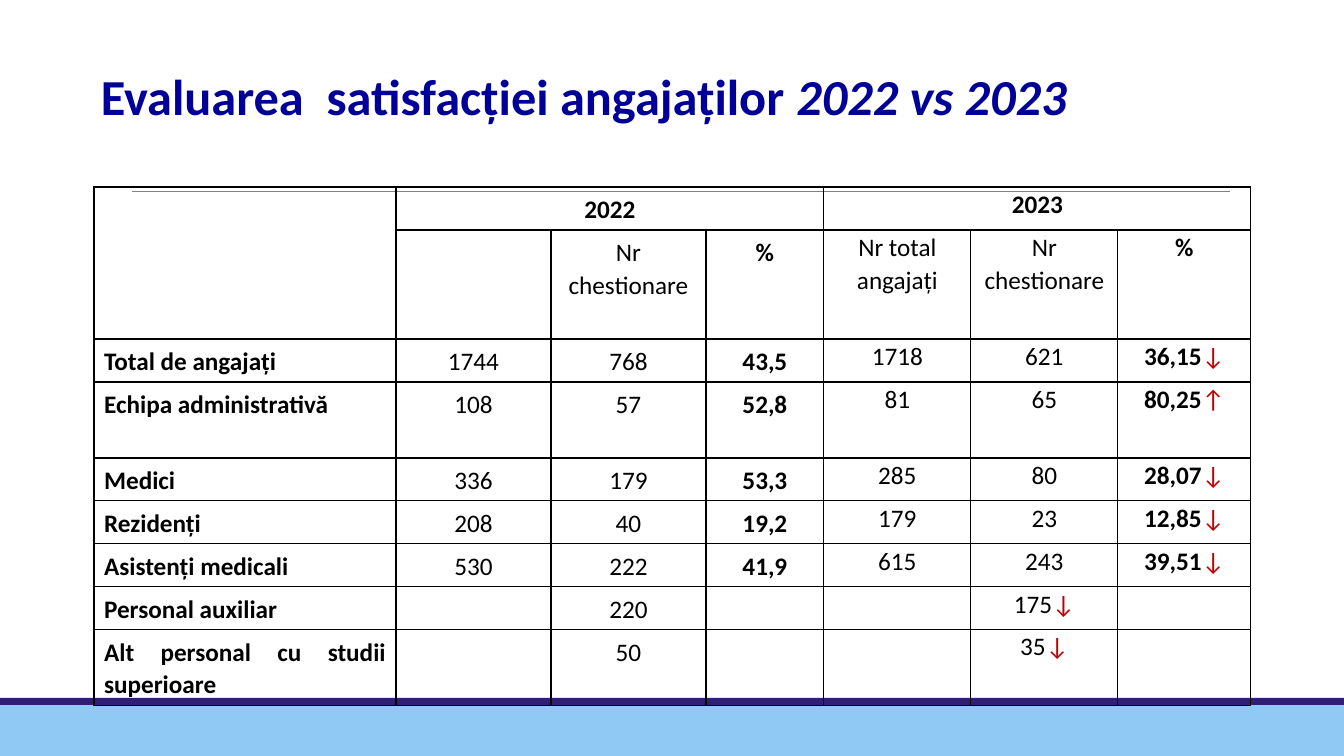
from lxml import etree
from pptx import Presentation
from pptx import util as u
from pptx.dml.color import RGBColor
from pptx.enum import shapes, text
from pptx.oxml import ns

PX_PER_INCH = 100.8
FONT = "Calibri"
COLORS = {
    "title": "000099", "text": "000000", "arrow": "C00000", "border": "000000",
    "band": "8FC9F4", "stripe": "301D7D", "rule": "808080",
}
COLUMN_WIDTHS = [302, 155, 155, 118, 147, 147, 133]
ROW_HEIGHTS = [43, 109, 43, 76, 43, 43, 43, 43, 76]
FIRST_2023_COLUMN = 4
PERCENT_COLUMNS = (3, 6)
MERGES = [((0, 0), (1, 0)), ((0, 1), (0, 3)), ((0, 4), (0, 6))]
ROWS = [
    ["", "2022", "", "", "2023", "", ""],
    ["", "", "Nr chestionare", "%", "Nr total angajați", "Nr chestionare", "%"],
    ["Total de angajați", "1744", "768", "43,5", "1718", "621", "36,15↓"],
    ["Echipa administrativă", "108", "57", "52,8", "81", "65", "80,25↑"],
    ["Medici", "336", "179", "53,3", "285", "80", "28,07↓"],
    ["Rezidenți", "208", "40", "19,2", "179", "23", "12,85↓"],
    ["Asistenți medicali", "530", "222", "41,9", "615", "243", "39,51↓"],
    ["Personal auxiliar", "", "220", "", "", "175↓", ""],
    ["Alt personal cu studii superioare", "", "50", "", "", "35↓", ""],
]


def px(length):
    return u.Emu(round(length * u.Inches(1) / PX_PER_INCH))


def rgb(name):
    return RGBColor.from_string(COLORS[name])


def set_attributes(target, values):
    for name, value in values.items():
        setattr(target, name, value)


def add_run(paragraph, content, color, **font_values):
    run = paragraph.add_run()
    run.text = content
    set_attributes(run.font, {"name": FONT, **font_values})
    run.font.color.rgb = rgb(color)


def add_bar(slide, top, height, color):
    bar = slide.shapes.add_shape(
        shapes.MSO_SHAPE.RECTANGLE, 0, px(top), px(1344), px(height))
    bar.shadow.inherit = False
    bar.fill.solid()
    bar.fill.fore_color.rgb = rgb(color)
    bar.line.fill.background()


def add_rule(slide, left, right, y):
    rule = slide.shapes.add_connector(
        shapes.MSO_CONNECTOR.STRAIGHT, px(left), px(y), px(right), px(y))
    rule.line.color.rgb = rgb("rule")
    rule.line.width = u.Pt(0.5)
    etree.SubElement(rule._element.spPr, ns.qn("a:effectLst"))


def add_title(slide):
    box = slide.shapes.add_textbox(px(91), px(60), px(996), px(72))
    set_attributes(box.text_frame, {
        "word_wrap": False, "auto_size": text.MSO_AUTO_SIZE.SHAPE_TO_FIT_TEXT})
    paragraph = box.text_frame.paragraphs[0]
    style = {"size": u.Pt(36), "bold": True}
    add_run(paragraph, "Evaluarea  satisfacției angajaților ", "title", **style)
    add_run(paragraph, "2022 vs 2023", "title", italic=True, **style)


def add_borders(cell):
    properties = cell._tc.get_or_add_tcPr()
    for index, side in enumerate(("lnL", "lnR", "lnT", "lnB")):
        line = etree.Element(ns.qn(f"a:{side}"), w=str(u.Pt(1)))
        fill = etree.SubElement(line, ns.qn("a:solidFill"))
        etree.SubElement(fill, ns.qn("a:srgbClr"), val=COLORS["border"])
        properties.insert(index, line)


def write_cell(cell, content, bold, alignment):
    """Write the value, with a trailing trend arrow in its own colour."""
    paragraph = cell.text_frame.paragraphs[0]
    set_attributes(paragraph, {"alignment": alignment, "line_spacing": 1.07})
    value = content.rstrip("↑↓")
    arrow = content[len(value):]
    add_run(paragraph, value, "text", size=u.Pt(18), bold=bold)
    if arrow:
        add_run(paragraph, arrow, "arrow", size=u.Pt(18), bold=False)


def add_survey_table(slide):
    frame = slide.shapes.add_table(
        len(ROWS), len(COLUMN_WIDTHS), px(94), px(187),
        px(sum(COLUMN_WIDTHS)), px(sum(ROW_HEIGHTS)))
    table = frame.table
    set_attributes(table, {"first_row": False, "horz_banding": False})
    for column, width in zip(table.columns, COLUMN_WIDTHS):
        column.width = px(width)
    for row, height in zip(table.rows, ROW_HEIGHTS):
        row.height = px(height)
    for start, end in MERGES:
        table.cell(*start).merge(table.cell(*end))
    for r, values in enumerate(ROWS):
        for c, content in enumerate(values):
            cell = table.cell(r, c)
            cell.fill.background()
            add_borders(cell)
            if c >= FIRST_2023_COLUMN:
                set_attributes(cell, dict.fromkeys(
                    ("margin_left", "margin_right", "margin_top", "margin_bottom"), 0))
            if content:
                bold = r == 0 or c == 0 or c in PERCENT_COLUMNS
                alignment = text.PP_ALIGN.CENTER if c else text.PP_ALIGN.JUSTIFY
                write_cell(cell, content, bold, alignment)


def main():
    presentation = Presentation()
    set_attributes(presentation, {"slide_width": px(1344), "slide_height": px(756)})
    slide = presentation.slides.add_slide(presentation.slide_layouts[6])
    add_bar(slide, 705, 51, "band")
    add_bar(slide, 698, 7, "stripe")
    add_rule(slide, 132, 1230, 191)
    add_title(slide)
    add_survey_table(slide)
    presentation.save("out.pptx")


if __name__ == "__main__":
    main()
